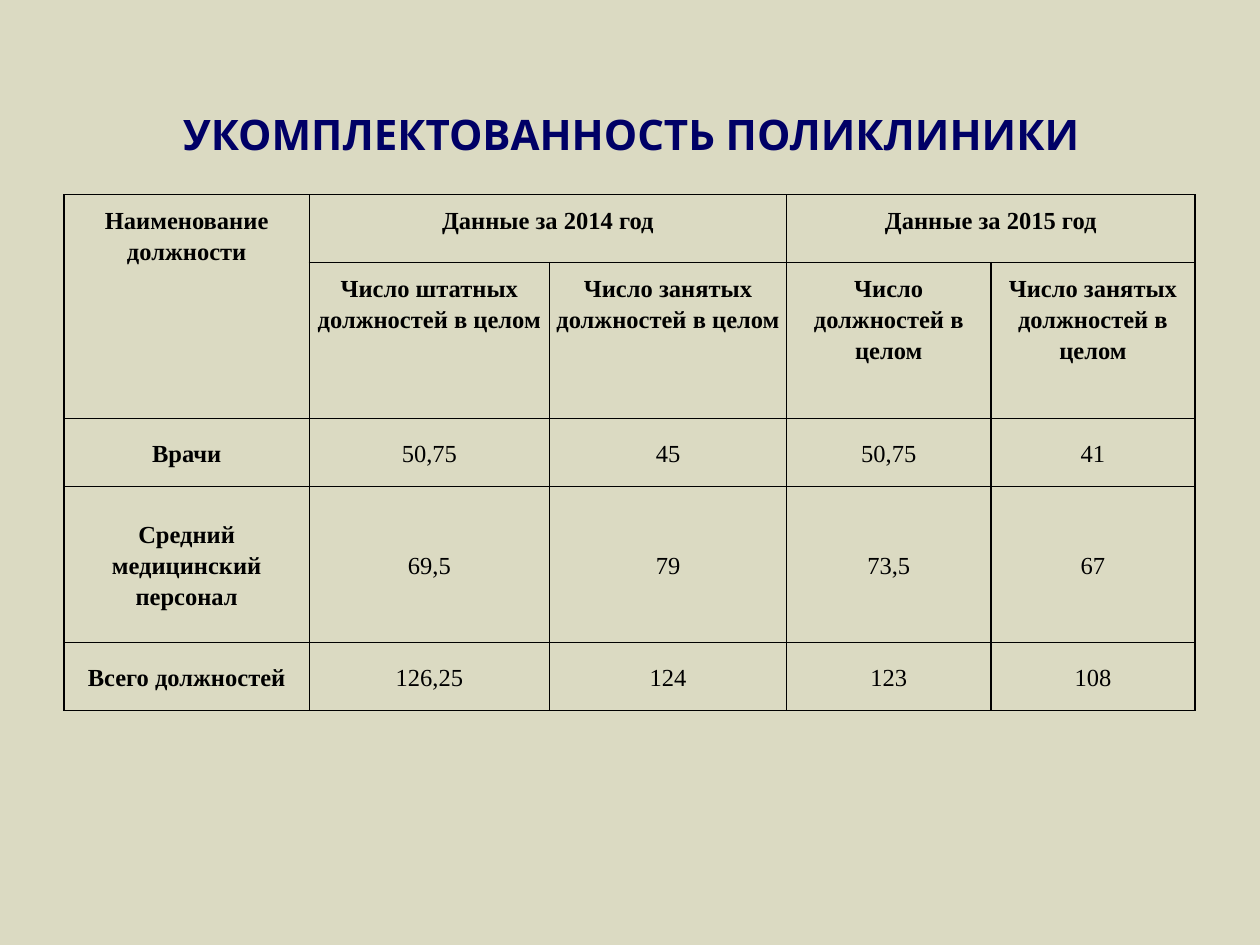
from dataclasses import dataclass

from lxml import etree
from pptx import Presentation
from pptx.dml.color import RGBColor
from pptx.enum.text import MSO_ANCHOR, PP_ALIGN
from pptx.oxml.ns import qn
from pptx.util import Pt

CENTER = PP_ALIGN.CENTER
TOP, MIDDLE = MSO_ANCHOR.TOP, MSO_ANCHOR.MIDDLE
TITLE_ONLY = 5


@dataclass(frozen=True)
class Theme:
    background: str = "DBDAC2"
    heading: str = "000066"
    ink: str = "000000"
    heading_font: str = "Karla"
    table_font: str = "Times New Roman"
    heading_size: int = 24
    table_size: int = 14
    border_width: int = 1


THEME = Theme()

HEADING = "УКОМПЛЕКТОВАННОСТЬ ПОЛИКЛИНИКИ"
LEFT = 36.6
COLUMN_WIDTHS = (140.2, 137.2, 135.6, 116.7, 116.7)
SHORT_ROW, TALL_ROW = 38.8, 89.2
ROW_HEIGHTS = (SHORT_ROW, TALL_ROW, SHORT_ROW, TALL_ROW, SHORT_ROW)
HEADER_ROWS = 2
# None marks a cell covered by a merged neighbour
STAFFING = (
    ("Наименование должности", "Данные за 2014 год", None, "Данные за 2015 год", None),
    (None, "Число штатных должностей в целом", "Число занятых должностей в целом",
     "Число должностей в целом", "Число занятых должностей в целом"),
    ("Врачи", "50,75", "45", "50,75", "41"),
    ("Средний медицинский персонал", "69,5", "79", "73,5", "67"),
    ("Всего должностей", "126,25", "124", "123", "108"),
)
MERGES = (((0, 0), (1, 0)), ((0, 1), (0, 2)), ((0, 3), (0, 4)))


def write(paragraph, text, font_name, size, color, bold):
    paragraph.alignment = CENTER
    run = paragraph.add_run()
    run.text = text
    run.font.name = font_name
    run.font.size = Pt(size)
    run.font.bold = bold
    run.font.color.rgb = RGBColor.from_string(color)


def add_heading(slide):
    heading = slide.shapes.title
    heading.left, heading.top = Pt(LEFT), Pt(43.2)
    heading.width, heading.height = Pt(648), Pt(66.2)
    frame = heading.text_frame
    frame.word_wrap = True
    frame.vertical_anchor = MIDDLE
    write(frame.paragraphs[0], HEADING, THEME.heading_font,
          THEME.heading_size, THEME.heading, True)


def set_borders(cell):
    properties = cell._tc.get_or_add_tcPr()
    for side in ("a:lnL", "a:lnR", "a:lnT", "a:lnB"):
        line = etree.SubElement(properties, qn(side), w=str(Pt(THEME.border_width)))
        fill = etree.SubElement(line, qn("a:solidFill"))
        etree.SubElement(fill, qn("a:srgbClr"), val=THEME.ink)


def format_cell(cell, anchor):
    set_borders(cell)
    cell.fill.background()
    cell.margin_left = cell.margin_right = Pt(2.9)
    cell.margin_top = cell.margin_bottom = Pt(5)
    cell.vertical_anchor = anchor


def add_staffing_table(slide):
    table = slide.shapes.add_table(
        len(ROW_HEIGHTS), len(COLUMN_WIDTHS), Pt(LEFT), Pt(111.3),
        Pt(sum(COLUMN_WIDTHS)), Pt(sum(ROW_HEIGHTS))).table
    table.horz_banding = False
    for column, width in zip(table.columns, COLUMN_WIDTHS):
        column.width = Pt(width)
    for row, height in zip(table.rows, ROW_HEIGHTS):
        row.height = Pt(height)

    # Spanning headers
    for first, last in MERGES:
        table.cell(*first).merge(table.cell(*last))

    # Cell contents: headers and job titles are bold
    for r, entries in enumerate(STAFFING):
        is_header = r < HEADER_ROWS
        for c, entry in enumerate(entries):
            cell = table.cell(r, c)
            format_cell(cell, TOP if is_header else MIDDLE)
            if entry is None:
                continue
            paragraph = cell.text_frame.paragraphs[0]
            paragraph.line_spacing = 1.15
            write(paragraph, entry, THEME.table_font, THEME.table_size,
                  THEME.ink, is_header or c == 0)


def main():
    presentation = Presentation()
    presentation.slide_width, presentation.slide_height = Pt(720), Pt(540)
    slide = presentation.slides.add_slide(presentation.slide_layouts[TITLE_ONLY])
    backdrop = slide.background.fill
    backdrop.solid()
    backdrop.fore_color.rgb = RGBColor.from_string(THEME.background)
    add_heading(slide)
    add_staffing_table(slide)
    presentation.save("out.pptx")


if __name__ == "__main__":
    main()
